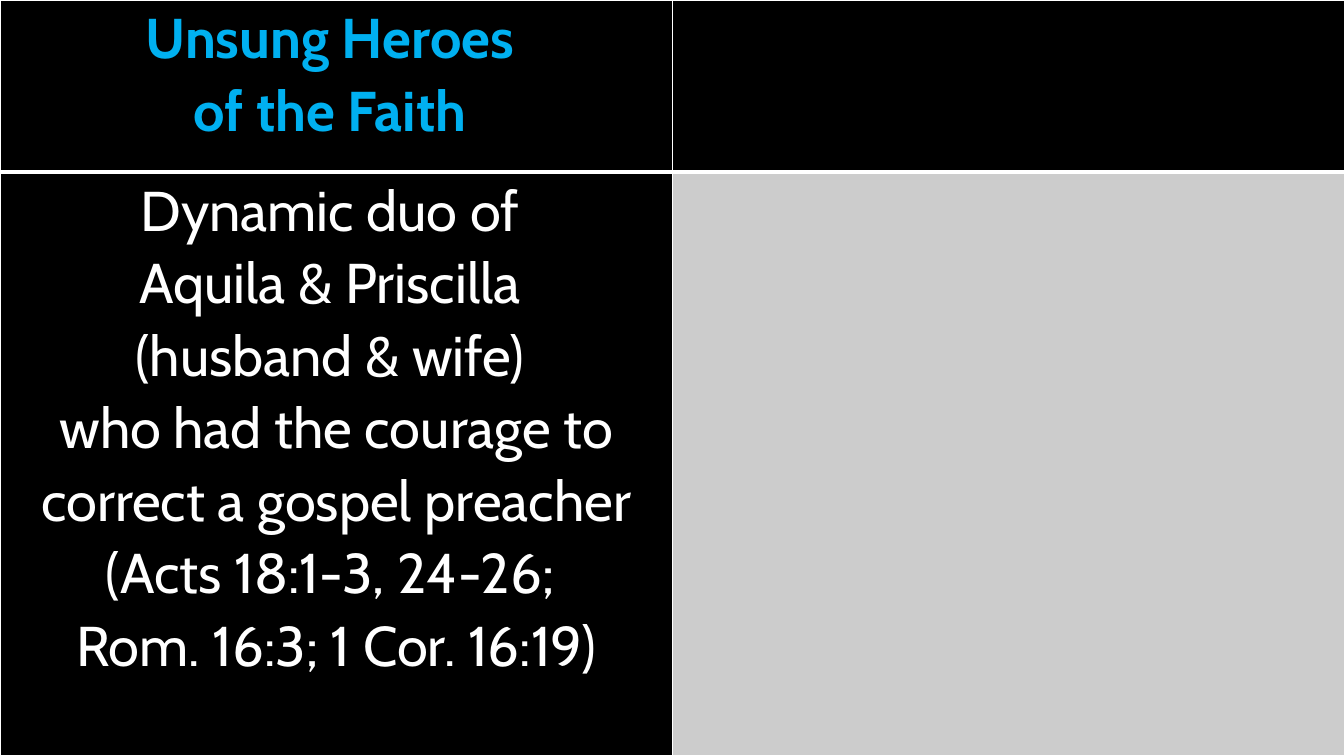
import pptx
import pptx.dml.color
import pptx.enum.text
import pptx.oxml
import pptx.oxml.ns
import pptx.util
from pptx.util import Inches

COLORS = {"black": "000000", "white": "FFFFFF", "blue": "00B0F0", "gray": "CCCCCC"}
HEADING = ["Unsung Heroes ", "of the Faith "]
STORY = [
    "Dynamic duo of ",
    "Aquila & Priscilla ",
    "(husband & wife) ",
    "who had the courage to correct a gospel preacher",
    "(Acts 18:1-3, 24-26; ",
    "Rom. 16:3; 1 Cor. 16:19)",
]


class SlideBuilder:
    """Holds the style and the current slide."""

    font_format = {"name": "Cabin", "size": pptx.util.Pt(40)}
    paragraph_format = {
        "alignment": pptx.enum.text.PP_ALIGN.CENTER,
        "line_spacing": 1.07,
    }
    cell_format = {
        "margin_left": Inches(0.07),
        "margin_right": Inches(0.07),
        "margin_top": 0,
        "margin_bottom": 0,
    }

    def __init__(self, presentation):
        self.slide = presentation.slides.add_slide(presentation.slide_layouts[6])

    def color(self, name):
        return pptx.dml.color.RGBColor.from_string(COLORS[name])

    def apply(self, target, values):
        for name, value in values.items():
            setattr(target, name, value)

    def background(self, color):
        fill = self.slide.background.fill
        fill.solid()
        fill.fore_color.rgb = self.color(color)

    def table(self, columns, rows):
        shape = self.slide.shapes.add_table(
            len(rows), len(columns), 0, 0, Inches(sum(columns)), Inches(sum(rows))
        )
        for column, width in zip(shape.table.columns, columns):
            column.width = Inches(width)
        for row, height in zip(shape.table.rows, rows):
            row.height = Inches(height)
        return shape.table

    def borders(self, cell, widths):
        properties = cell._tc.get_or_add_tcPr()
        for side, width in zip("LRTB", widths):
            properties.append(pptx.oxml.parse_xml(
                f'<a:ln{side} {pptx.oxml.ns.nsdecls("a")} w="{pptx.util.Pt(width)}">'
                f'<a:solidFill><a:srgbClr val="{COLORS["white"]}"/></a:solidFill>'
                f'</a:ln{side}>'
            ))

    def cell(self, cell, fill, widths):
        self.apply(cell, self.cell_format)
        self.borders(cell, widths)
        cell.fill.solid()
        cell.fill.fore_color.rgb = self.color(fill)

    def text(self, cell, lines, color, bold):
        frame = cell.text_frame
        for index, line in enumerate(lines):
            paragraph = frame.add_paragraph() if index else frame.paragraphs[0]
            self.apply(paragraph, self.paragraph_format)
            run = paragraph.add_run()
            run.text = line
            self.apply(run.font, {**self.font_format, "bold": bold})
            run.font.color.rgb = self.color(color)


def main():
    presentation = pptx.Presentation()
    presentation.slide_width = Inches(13.33)
    presentation.slide_height = Inches(7.5)
    builder = SlideBuilder(presentation)
    builder.background("black")
    table = builder.table([6.67, 6.67], [1.71, 5.79])
    row_styles = [
        (["black", "black"], (1, 1, 1, 3)),
        (["black", "gray"], (1, 1, 3, 1)),
    ]
    for row, (fills, widths) in zip(table.rows, row_styles):
        for cell, fill in zip(row.cells, fills):
            builder.cell(cell, fill, widths)
    builder.text(table.cell(0, 0), HEADING, "blue", True)
    builder.text(table.cell(1, 0), STORY, "white", False)
    presentation.save("out.pptx")


if __name__ == "__main__":
    main()
